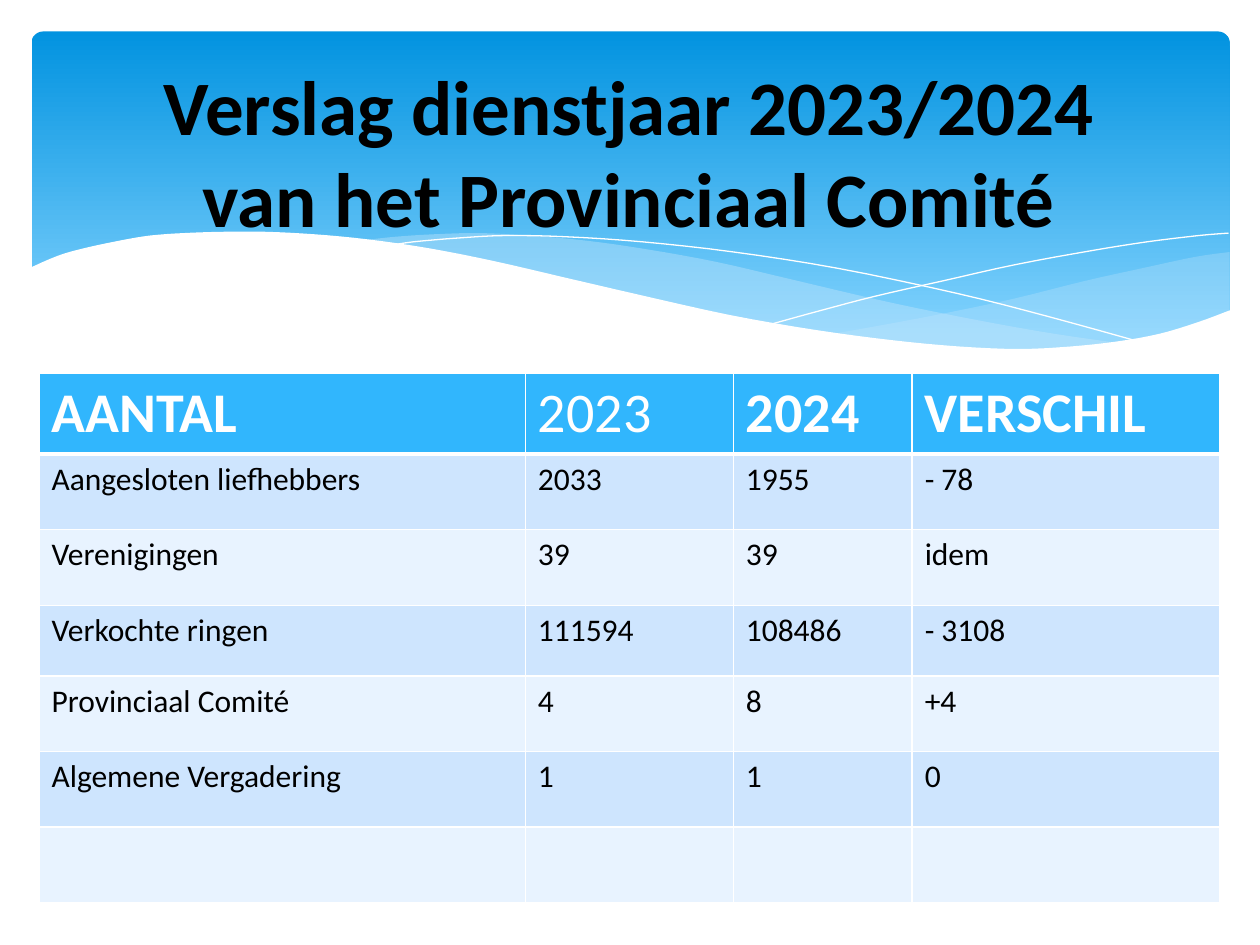
from dataclasses import dataclass
from typing import Optional

from lxml.etree import SubElement
from pptx import Presentation
from pptx.dml.color import RGBColor as RGB
from pptx.enum.shapes import MSO_SHAPE as Kind
from pptx.enum.text import MSO_ANCHOR as Anchor, PP_ALIGN as Align
from pptx.oxml import parse_xml
from pptx.oxml.ns import nsdecls, qn
from pptx.util import Inches, Pt

HUE = {
    "sky": "0293E0", "pale": "83D3FE", "mist": "C6E7FC", "white": "FFFFFF",
    "black": "000000", "head": "31B6FD", "odd": "CEE5FE", "even": "E8F3FF",
}
FONT = "Calibri"
Point = tuple[float, float]


@dataclass
class Wave:
    """Smooth edges joined by corners; without a fill it is a thin line."""
    edges: list[list[Point]]
    fill: Optional[str] = None
    alpha: int = 100


WAVES = [
    # Right swell
    Wave([[(9.76, 2), (9.48, 2.04), (9.06, 2.13), (8.61, 2.23), (8.05, 2.37),
           (7.53, 2.48), (7.06, 2.57), (6.61, 2.65)],
          [(6.61, 2.65), (7.05, 2.71), (7.45, 2.75), (7.81, 2.77), (8.14, 2.78),
           (8.54, 2.76), (8.89, 2.72), (9.21, 2.65), (9.49, 2.57), (9.76, 2.47)]],
         "mist", 29),
    # Middle swell
    Wave([[(8.93, 2.73), (8.37, 2.65), (7.75, 2.54), (7.06, 2.4), (6.29, 2.22),
           (5.69, 2.08), (5.14, 1.98), (4.65, 1.91), (4.2, 1.87), (3.8, 1.85),
           (3.44, 1.86), (3.13, 1.88), (2.86, 1.91)],
          [(2.86, 1.91), (3.42, 1.99), (4.04, 2.11), (4.49, 2.22), (5.3, 2.4),
           (6.01, 2.55), (6.65, 2.66), (7.22, 2.74), (7.73, 2.77), (8.18, 2.78),
           (8.57, 2.77), (8.93, 2.73)]],
         "mist", 40),
    # Crossing lines
    Wave([[(3.09, 1.95), (3.28, 1.92), (3.63, 1.89), (4.01, 1.87), (4.5, 1.88),
           (5.1, 1.92), (5.82, 2), (6.65, 2.13), (7.6, 2.33), (8.31, 2.51),
           (9.07, 2.72)]]),
    Wave([[(6.13, 2.57), (6.53, 2.46), (6.95, 2.35), (7.48, 2.23), (8.06, 2.1),
           (8.66, 1.99), (9.1, 1.92), (9.51, 1.87), (9.75, 1.85)]]),
    # White hill that cuts the banner
    Wave([[(9.77, 2.46), (9.5, 2.56), (9.2, 2.65), (8.87, 2.71), (8.5, 2.75),
           (8.09, 2.77), (7.61, 2.75), (7.08, 2.7), (6.48, 2.62), (5.79, 2.5),
           (5.03, 2.33), (4.47, 2.2), (3.91, 2.07), (3.4, 1.97), (2.92, 1.9),
           (2.5, 1.86), (2.11, 1.84), (1.77, 1.84), (1.46, 1.85), (1.19, 1.87),
           (0.95, 1.91), (0.67, 1.97), (0.46, 2.03), (0.23, 2.13)],
          [(0.23, 3.29), (9.77, 3.29)]],
         "white"),
]

COLS = [3.86, 1.65, 1.42, 2.44]
ROWS = [
    ("AANTAL", "2023", "2024", "VERSCHIL"),
    ("Aangesloten liefhebbers", "2033", "1955", "- 78"),
    ("Verenigingen", "39", "39", "idem"),
    ("Verkochte ringen", "111594", "108486", "- 3108"),
    ("Provinciaal Comité", "4", "8", "+4"),
    ("Algemene Vergadering", "1", "1", "0"),
    ("", "", "", ""),
]


def tint(name: str) -> RGB:
    return RGB.from_string(HUE[name])


def write(frame, text: str, *, size: float, color: str = "black",
          bold: bool = False, align: Align = Align.LEFT) -> None:
    para = frame.paragraphs[0]
    para.text = text
    para.alignment = align
    para.font.size = Pt(size)
    for run in para.runs:
        font = run.font
        font.name, font.size, font.bold = FONT, Pt(size), bold
        font.color.rgb = tint(color)


def smooth(edge: list[Point], steps: int = 4) -> list[Point]:
    """Run a Catmull-Rom curve through the points of an edge."""
    if len(edge) < 3:
        return edge
    pad = [edge[0], *edge, edge[-1]]
    out = [edge[0]]
    for a, b, c, d in zip(pad, pad[1:], pad[2:], pad[3:]):
        for n in range(1, steps + 1):
            t = n / steps
            out.append(tuple(
                (2 * q + (r - p) * t + (2 * p - 5 * q + 4 * r - s) * t ** 2
                 + (3 * q - p - 3 * r + s) * t ** 3) / 2
                for p, q, r, s in zip(a, b, c, d)))
    return out


def draw_wave(shapes, wave: Wave) -> None:
    dots = [(Inches(x), Inches(y)) for e in wave.edges for x, y in smooth(e)]
    pen = shapes.build_freeform(*dots[0])
    pen.add_line_segments(dots[1:], close=wave.fill is not None)
    shape = pen.convert_to_shape()
    shape.shadow.inherit = False
    if wave.fill is None:
        shape.fill.background()
        shape.line.color.rgb = tint("white")
        shape.line.width = Pt(0)
        return
    shape.line.fill.background()
    shape.fill.solid()
    shape.fill.fore_color.rgb = tint(wave.fill)
    if wave.alpha < 100:
        color = shape.fill._xPr.find(qn("a:solidFill"))[0]
        SubElement(color, qn("a:alpha")).set("val", str(wave.alpha * 1000))


def draw_banner(shapes) -> None:
    shape = shapes.add_shape(Kind.ROUNDED_RECTANGLE, Inches(0.25), Inches(0.25),
                             Inches(9.51), Inches(2.7))
    shape.adjustments[0] = 0.034
    shape.shadow.inherit = False
    shape.line.fill.background()
    shape.fill.gradient()
    shape.fill.gradient_angle = 270
    for stop, name, place in zip(shape.fill.gradient_stops, ("sky", "pale"), (0, 0.9)):
        stop.color.rgb = tint(name)
        stop.position = place


def frame_cell(cell, top: float, base: float) -> None:
    props = cell._tc.get_or_add_tcPr()
    for n, (side, width) in enumerate(zip("LRTB", (1, 1, top, base))):
        props.insert(n, parse_xml(
            f'<a:ln{side} {nsdecls("a")} w="{Pt(width)}"><a:solidFill>'
            f'<a:srgbClr val="{HUE["white"]}"/></a:solidFill></a:ln{side}>'))


def draw_table(shapes) -> None:
    table = shapes.add_table(len(ROWS), len(COLS), Inches(0.31), Inches(2.96),
                             Inches(sum(COLS)), Inches(4.16)).table
    for col, width in zip(table.columns, COLS):
        col.width = Inches(width)
    for r, row in enumerate(ROWS):
        table.rows[r].height = Inches(0.56 if r == 3 else 0.6)
        head = r == 0
        for c, text in enumerate(row):
            cell = table.cell(r, c)
            cell.fill.solid()
            cell.fill.fore_color.rgb = tint("head" if head else "odd" if r % 2 else "even")
            frame_cell(cell, 3 if r == 1 else 1, 3 if head else 1)
            write(cell.text_frame, text, size=32 if head else 18,
                  color="white" if head else "black", bold=head and c != 1)


def draw_title(shapes) -> None:
    frame = shapes.add_textbox(Inches(0.31), Inches(0.21),
                               Inches(9.37), Inches(1.97)).text_frame
    frame.word_wrap = False
    frame.vertical_anchor = Anchor.MIDDLE
    write(frame, "Verslag dienstjaar 2023/2024\vvan het Provinciaal Comité",
          size=44, bold=True, align=Align.CENTER)


def main() -> None:
    deck = Presentation()
    deck.slide_width, deck.slide_height = Inches(10), Inches(7.5)
    shapes = deck.slides.add_slide(deck.slide_layouts[6]).shapes
    draw_banner(shapes)
    for wave in WAVES:
        draw_wave(shapes, wave)
    draw_table(shapes)
    draw_title(shapes)
    deck.save("out.pptx")


if __name__ == "__main__":
    main()
